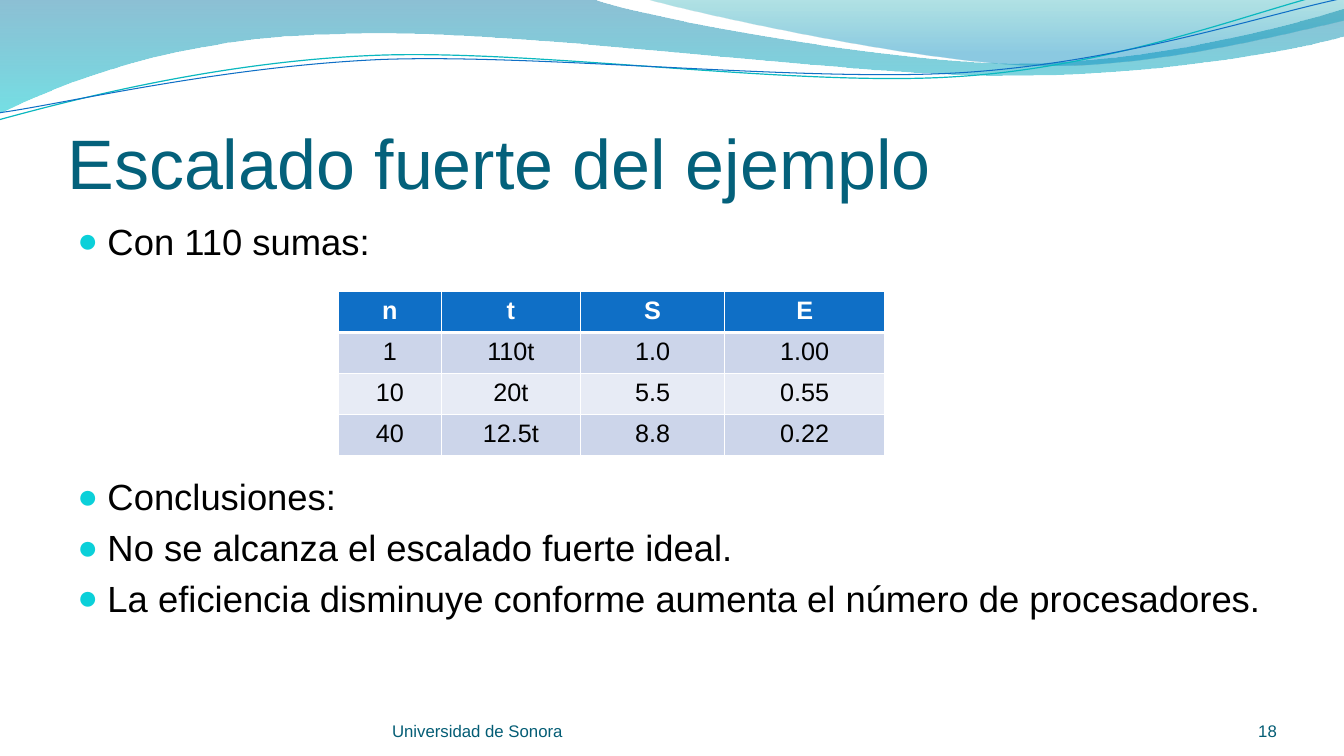
from lxml.etree import SubElement
from pptx import Presentation
from pptx.dml.color import RGBColor
from pptx.enum.text import MSO_ANCHOR, PP_ALIGN
from pptx.oxml.ns import qn
from pptx.util import Cm, Pt

FONT = "Arial"
WHITE, BLACK = "FFFFFF", "000000"
BLUE, TEAL, AQUA = "0F6FC6", "0AB8BF", "0BD0D9"
NAVY, SLATE = "04617B", "045D75"

BAND = [(0, 0), (14.91, -.03),
        (16.1, .43, 22.48, 1.6, 25.68, 1.6),
        (28.91, 1.6, 32.46, .66, 33.86, .23), (33.91, .91),
        (33.3, 1.12, 29.46, 1.93, 25.25, 1.91),
        (21.06, 1.91, 12.93, .71, 8.71, .86),
        (4.37, .91, 1.55, 2.11, -.03, 2.87)]
CREST = [(16.23, -.03),
         (17.25, .28, 23.09, 1.57, 26.04, 1.65),
         (28.98, 1.75, 32.56, .81, 33.86, .53), (33.86, 0)]
CURVES = [
    (TEAL, .85, [(-.03, 3.02), (1.63, 2.57, 5.36, 1.57, 9.37, 1.4),
                 (13.39, 1.22, 20.07, 2.21, 24.13, 1.93),
                 (28.19, 1.68, 31.8, .2, 33.81, -.25)]),
    (BLUE, .75, [(0, 2.84), (1.6, 2.62, 5.54, 1.68, 9.6, 1.5),
                 (13.64, 1.35, 20.22, 2.08, 24.26, 1.83),
                 (28.32, 1.57, 31.88, .36, 33.88, -.05)]),
]
ROWS = [("n", "t", "S", "E"),
        ("1", "110t", "1.0", "1.00"),
        ("10", "20t", "5.5", "0.55"),
        ("40", "12.5t", "8.8", "0.22")]
POINTS = ["Con 110 sumas:", "Conclusiones:",
          "No se alcanza el escalado fuerte ideal.",
          "La eficiencia disminuye conforme aumenta el número de procesadores."]


def rgb(code):
    return RGBColor.from_string(code)


def style(para, size, color, bold=False, align=PP_ALIGN.LEFT):
    font = para.font
    font.name, font.size, font.bold = FONT, Pt(size), bold
    font.color.rgb = rgb(color)
    para.alignment = align


def bend(shape, box, steps):
    lines = list(shape._element.iter(qn("a:lnTo")))
    for line, step in zip(lines, steps[1:]):
        if len(step) == 2:
            continue
        curve = SubElement(line.getparent(), qn("a:cubicBezTo"))
        for x, y in zip(step[::2], step[1::2]):
            SubElement(curve, qn("a:pt"), x=str(Cm(box[0] + x) - shape.left),
                       y=str(Cm(box[1] + y) - shape.top))
        line.getparent().replace(line, curve)


def draw(slide, box, steps, close):
    dots = [(Cm(box[0] + step[-2]), Cm(box[1] + step[-1])) for step in steps]
    pen = slide.shapes.build_freeform(*dots[0])
    pen.add_line_segments(dots[1:], close=close)
    shape = pen.convert_to_shape()
    shape.shadow.inherit = False
    bend(shape, box, steps)
    return shape


def add_wave(slide, box, steps, stops):
    shape = draw(slide, box, steps, True)
    shape.line.fill.background()
    shape.fill.gradient()
    shape.fill.gradient_angle = 270
    for stop, (place, color, alpha) in zip(shape.fill.gradient_stops, stops):
        stop.position = place
        stop.color.rgb = rgb(color)
    tags = shape._element.spPr.iter(qn("a:srgbClr"))
    for tag, (place, color, alpha) in zip(tags, stops):
        SubElement(tag, qn("a:alpha"), val=str(alpha * 1000))


def add_header(slide, box):
    add_wave(slide, box, BAND, [(0, "0074A1", 45), (1, "00C6CF", 55)])
    add_wave(slide, box, CREST, [(0, "00A1A9", 30), (.8, "008BBF", 45)])
    for color, width, steps in CURVES:
        shape = draw(slide, box, steps, False)
        shape.fill.background()
        shape.line.color.rgb = rgb(color)
        shape.line.width = Pt(width)


def set_frame(frame, anchor, edges):
    frame.word_wrap = True
    frame.vertical_anchor = anchor
    (frame.margin_left, frame.margin_top,
     frame.margin_right, frame.margin_bottom) = map(Cm, edges)


def add_title(slide, box):
    title = slide.shapes.title
    title.left, title.top, title.width, title.height = map(Cm, box)
    set_frame(title.text_frame, MSO_ANCHOR.BOTTOM, (0, .13, 0, 0))
    title.text_frame.text = "Escalado fuerte del ejemplo"
    style(title.text_frame.paragraphs[0], 50, NAVY)


def add_bullet(para):
    props = para._p.get_or_add_pPr()
    props.set("marL", str(Cm(.76)))
    props.set("indent", str(-Cm(.76)))
    tint = SubElement(props, qn("a:buClr"))
    SubElement(tint, qn("a:srgbClr"), val=AQUA)
    SubElement(props, qn("a:buSzPct"), val="95000")
    SubElement(props, qn("a:buFont"), typeface=FONT)
    SubElement(props, qn("a:buChar"), char="●")


def add_points(slide, box):
    frame = slide.shapes.add_textbox(*map(Cm, box)).text_frame
    set_frame(frame, MSO_ANCHOR.TOP, (.25, .13, .25, .13))
    frame.text = "\n".join(POINTS)
    for para, gap in zip(frame.paragraphs, (1.8, 151.5, 5.2, 5.2)):
        para.space_before = Pt(gap)
        add_bullet(para)
        style(para, 26, BLACK)


def set_edges(cell, head):
    props = cell._tc.get_or_add_tcPr()
    widths = {"lnL": 1, "lnR": 1, "lnT": 1, "lnB": 3 if head else 1}
    for side, width in widths.items():
        edge = SubElement(props, qn("a:" + side), w=str(Pt(width)))
        fill = SubElement(edge, qn("a:solidFill"))
        SubElement(fill, qn("a:srgbClr"), val=WHITE)


def add_grid(slide, box):
    frame = slide.shapes.add_table(len(ROWS), len(ROWS[0]), *map(Cm, box))
    table = frame.table
    for col, width in zip(table.columns, (2.59, 3.51, 3.63, 4.04)):
        col.width = Cm(width)
    for r, row in enumerate(ROWS):
        table.rows[r].height = Cm(box[3] / len(ROWS))
        head = r == 0
        shade = BLUE if head else ("E7EBF5", "CCD5EA")[r % 2]
        for c, text in enumerate(row):
            cell = table.cell(r, c)
            cell.text = text
            style(cell.text_frame.paragraphs[0], 18, WHITE if head else BLACK,
                  head, PP_ALIGN.CENTER)
            set_edges(cell, head)
            cell.fill.solid()
            cell.fill.fore_color.rgb = rgb(shade)


def add_note(slide, box, text, align):
    frame = slide.shapes.add_textbox(*map(Cm, box)).text_frame
    set_frame(frame, MSO_ANCHOR.BOTTOM, (0, 0, 0, 0))
    frame.text = text
    style(frame.paragraphs[0], 12, SLATE, align=align)


def add_footer(slide, box):
    left, top, width, height = box
    add_note(slide, (left + 8.18, top, 12.42, height),
             "Universidad de Sonora", PP_ALIGN.LEFT)
    add_note(slide, (left + width - 2.82, top, 2.82, height), "18", PP_ALIGN.RIGHT)


def main():
    deck = Presentation()
    deck.slide_width, deck.slide_height = Cm(33.87), Cm(19.05)
    slide = deck.slides.add_slide(deck.slide_layouts[5])
    add_header(slide, (0, 0))
    add_title(slide, (1.7, 1.96, 30.48, 3.18))
    add_points(slide, (1.7, 5.38, 30.48, 12.19))
    add_grid(slide, (8.53, 7.34, 13.77, 4.14))
    add_footer(slide, (1.7, 17.65, 30.48, 1.02))
    deck.save("out.pptx")


if __name__ == "__main__":
    main()
